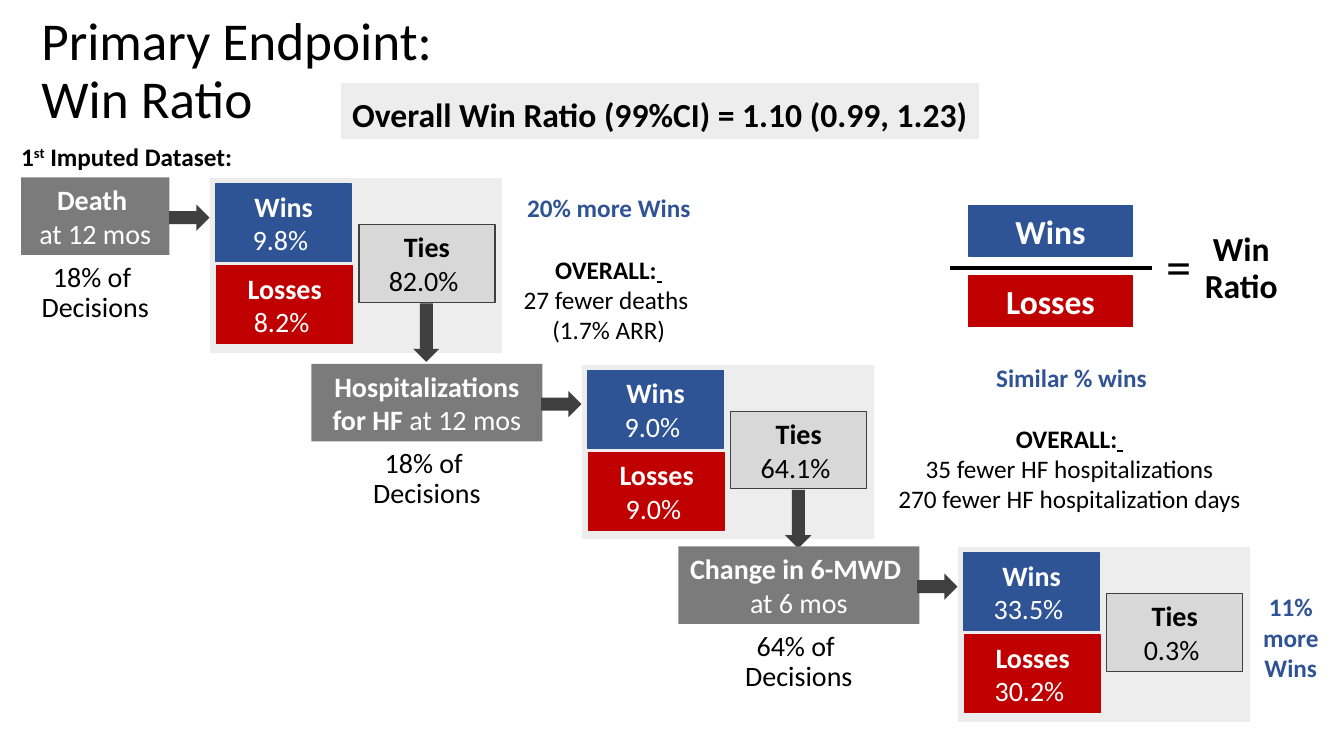
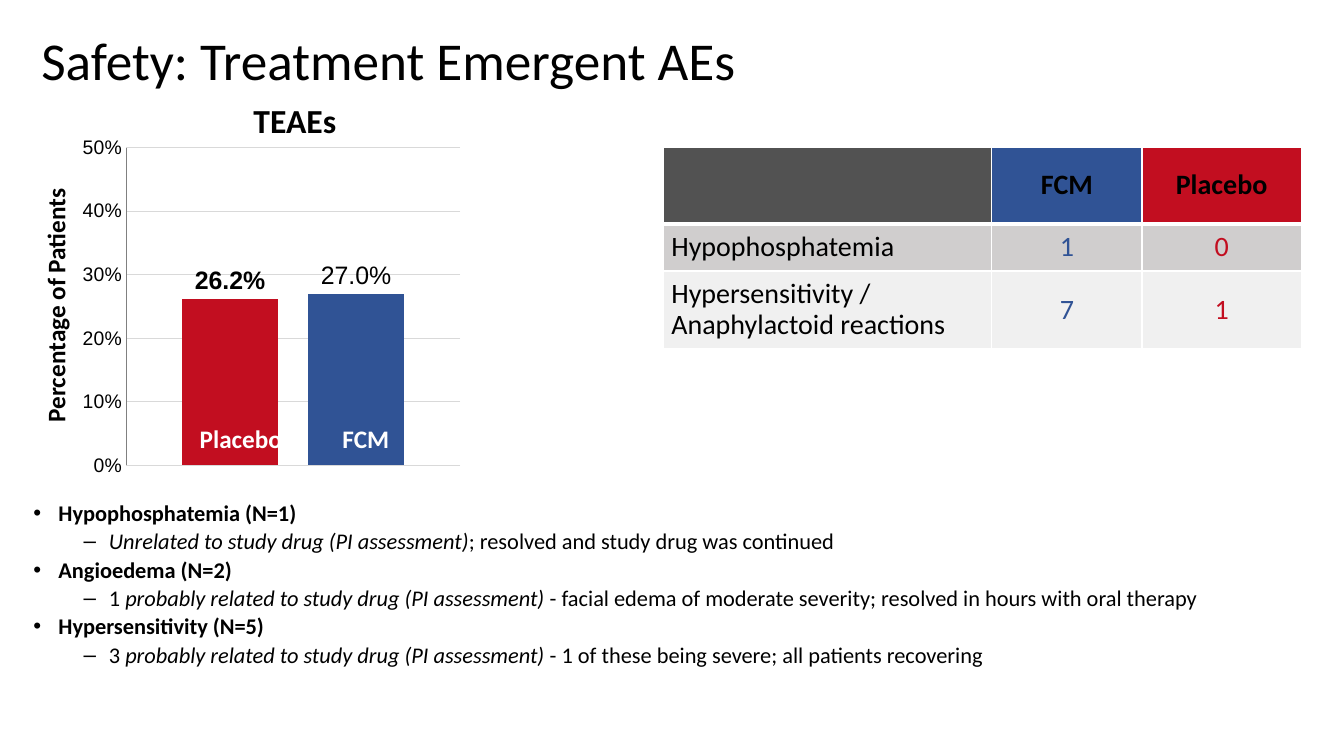
"""Build two trial result slides: the win ratio cascade and the safety summary."""
from lxml.etree import SubElement
from pptx import Presentation
from pptx.chart.data import CategoryChartData
from pptx.dml.color import RGBColor
from pptx.enum.chart import XL_CHART_TYPE as Chart, XL_LABEL_POSITION as LabelPos, XL_TICK_MARK as Tick
from pptx.enum.shapes import MSO_CONNECTOR as Link, MSO_SHAPE as Shape
from pptx.enum.text import MSO_ANCHOR as Anchor, PP_ALIGN as Align
from pptx.oxml import parse_xml
from pptx.oxml.ns import nsdecls, qn
from pptx.util import Inches, Pt

BLACK, WHITE = "000000", "FFFFFF"
WIN, LOSS, TIE = "2F5496", "C00000", "D8D8D8"
PANEL, STAGE, ARROW = "EDEDED", "7B7B7B", "3F3F3F"
FCM, PLACEBO = "305395", "C20E20"
FONT = "Calibri"
rgb = RGBColor.from_string

prs = Presentation()
prs.slide_width, prs.slide_height = Inches(13.33), Inches(7.5)
COL, ROW = prs.slide_width / 160, prs.slide_height / 90


def write(tf, paras, size, hex, align=Align.CENTER, spacing=1.0):
    """Fill a text frame with paragraphs, each a list of (text, style letters)."""
    for i, runs in enumerate(paras):
        p = tf.paragraphs[0] if i == 0 else tf.add_paragraph()
        p.alignment, p.line_spacing = align, spacing
        for text, style in runs:
            r = p.add_run()
            r.text = text
            r.font.name, r.font.size, r.font.color.rgb = FONT, Pt(size), rgb(hex)
            r.font.bold, r.font.italic = "b" in style, "i" in style
            r.font.underline = "u" in style
            if "^" in style:
                r.font._element.set("baseline", "30000")


def box(s, pos, paras=(), size=20, hex=BLACK, fill=None, line=None, weight=1,
        shape=Shape.RECTANGLE, align=Align.CENTER, spacing=1.0, inset=(0.1, 0.05)):
    """Place a text box, or a filled shape, at grid columns and rows."""
    x, y, w, h = (int(v * unit) for v, unit in zip(pos, (COL, ROW, COL, ROW)))
    if fill:
        sp = s.shapes.add_shape(shape, x, y, w, h)
        sp.shadow.inherit = False
        sp.fill.solid()
        sp.fill.fore_color.rgb = rgb(fill)
        if line:
            sp.line.color.rgb, sp.line.width = rgb(line), Pt(weight)
        else:
            sp.line.fill.background()
    else:
        sp = s.shapes.add_textbox(x, y, w, h)
    tf = sp.text_frame
    tf.word_wrap = True
    tf.vertical_anchor = Anchor.MIDDLE if fill else Anchor.TOP
    tf.margin_left = tf.margin_right = Inches(inset[0])
    tf.margin_top = tf.margin_bottom = Inches(inset[1])
    write(tf, paras, size, hex, align, spacing)
    return sp


titles = [(1.08, ["Primary Endpoint:", "Win Ratio"]), (0, ["Safety: Treatment Emergent AEs"])]
for top, lines in titles:
    s = prs.slides.add_slide(prs.slide_layouts[6])
    sp = box(s, (4.92, top, 150, 15), [[(t, "")] for t in lines], 38,
             align=Align.LEFT, spacing=0.9, inset=(0, 0))
    sp.text_frame.vertical_anchor = Anchor.MIDDLE
ratio, safety = prs.slides

s = ratio
box(s, (40.44, 9.72, 76.2, 6.96), [[("Overall Win Ratio (99%CI)\u00a0= 1.10 (0.99, 1.23)".replace("\u00a0", " "), "b")]],
    24, fill=PANEL, line=WHITE, weight=1.5, spacing=1.14)
box(s, (2.52, 15.72, 92, 5), [[("1", "b"), ("st", "b^"), (" Imputed Dataset:", "b")]], 18,
    align=Align.LEFT, spacing=1.14, inset=(0, 0.05))

stages = [
    (24.84, 21.12, 2.52, 17.64, [[("Death ", "b")], [("at 12 mos", "")]],
     "18%", ("9.8% ", "8.2% ", "82.0% ")),
    (69.12, 43.32, 37.08, 27.48, [[("Hospitalizations", "b")], [("for HF", "b"), (" at 12 mos", "")]],
     "18%", ("9.0% ", "9.0% ", "64.1% ")),
    (113.88, 65.04, 80.76, 28.68, [[("Change in 6-MWD ", "b")], [("at 6 mos", "")]],
     "64%", ("33.5% ", "30.2% ", "0.3% ")),
]
outcomes = [("Wins", 0.84, 0.78, WIN, WIN, WHITE), ("Losses", 0.96, 10.56, LOSS, LOSS, WHITE),
            ("Ties", 17.88, 5.64, TIE, ARROW, BLACK)]
for x, y, left, width, name, share, rates in stages:
    box(s, (x, y, 35.04, 21), fill=PANEL, line=WHITE, weight=1.5)
    for (label, dx, dy, fill, line, hex), rate in zip(outcomes, rates):
        box(s, (x + dx, y + dy, 16.2, 9.24), [[(label, "b")], [(rate, "")]],
            hex=hex, fill=fill, line=line)
    box(s, (left, y, width, 9.24), name, hex=WHITE, fill=STAGE)
    box(s, (left, y + 9.6, width, 9), [[(share + " of ", "")], [("Decisions", "")]], spacing=0.9)
    box(s, (x - 4.7, y + 3.24, 4.8, 3.12), fill=ARROW, shape=Shape.RIGHT_ARROW)
    if y < stages[-1][1]:
        box(s, (x + 24.36, y + 15, 3.12, 6.96), fill=ARROW, shape=Shape.DOWN_ARROW)

overall = [("OVERALL:", "b"), (" ", "u")]
comments = [
    ((60.84, 22.32, 23.28, 19.4), FCM, [[("20% more Wins", "b")]]),
    ((60.84, 29.64, 23.28, 12.1), BLACK, [overall, [("27 fewer deaths ", "")], [("(1.7% ARR)", "")]]),
    ((105.12, 42.6, 44.88, 4.8), FCM, [[("Similar % wins", "b")]]),
    ((104.88, 49.8, 44.88, 12.1), BLACK,
     [overall, [("35 fewer HF hospitalizations", "")], [("270 fewer HF hospitalization days", "")]]),
    ((149.16, 69.84, 9, 12.1), FCM, [[(t, "b")] for t in ("11%", "more", "Wins")]),
]
for pos, hex, paras in comments:
    box(s, pos, paras, 18, hex)

for label, top, fill in (("Wins", 24.48, WIN), ("Losses", 32.88, LOSS)):
    box(s, (115.32, top, 19.5, 6), [[(label, "b")]], 24, WHITE, fill, fill)
bar = s.shapes.add_connector(Link.STRAIGHT, int(113.04 * COL), int(31.92 * ROW),
                             int(137.16 * COL), int(31.92 * ROW))
bar.line.color.rgb, bar.line.width = rgb(BLACK), Pt(3)
SubElement(bar._element.spPr, qn("a:effectLst"))
box(s, (137.64, 27.36, 6.6, 8.52), [[("=", "")]], 36, align=Align.LEFT)
box(s, (139.68, 27.12, 16.2, 9.96), [[("Win Ratio", "b")]], 24, spacing=0.9)

s = safety
data = CategoryChartData(number_format="0.0%")
data.categories = ["1"]
data.add_series("Series 1", [0.262])
data.add_series("Series 2", [0.27])
chart = s.shapes.add_chart(Chart.COLUMN_CLUSTERED, int(9.84 * COL), int(11.64 * ROW),
                           int(46.32 * COL), int(45.6 * ROW), data).chart
chart.has_legend = chart.has_title = False
chart.font.name, chart.font.size, chart.font.color.rgb = "Arial", Pt(14), rgb(BLACK)
chart.category_axis.visible = False
axis = chart.value_axis
axis.minimum_scale, axis.maximum_scale, axis.major_unit = 0, 0.5, 0.1
axis.major_tick_mark = axis.minor_tick_mark = Tick.NONE
axis.tick_labels.number_format, axis.tick_labels.number_format_is_linked = "0%", False
axis.format.line.color.rgb, axis.format.line.width = rgb("808080"), Pt(0.75)
grid = axis.major_gridlines.format.line
grid.color.rgb, grid.width = rgb("D9D9D9"), Pt(0.75)
plot = chart.plots[0]
plot.gap_width, plot.overlap, plot.vary_by_categories = 118, -32, False
for series, hex, bold in zip(plot.series, (PLACEBO, FCM), (True, False)):
    series.format.fill.solid()
    series.format.fill.fore_color.rgb = rgb(hex)
    labels = series.data_labels
    labels.show_value, labels.position = True, LabelPos.OUTSIDE_END
    labels.number_format, labels.number_format_is_linked = "0.0%", False
    labels.font.name, labels.font.size, labels.font.bold = "Arial", Pt(18), bold
    labels.font.color.rgb = rgb(BLACK)
area = chart.element.xpath("c:chart/c:plotArea")[0]
for old in area.findall(qn("c:layout")):
    area.remove(old)
area.insert(0, parse_xml(
    f'<c:layout {nsdecls("c")}><c:manualLayout><c:layoutTarget val="inner"/>'
    '<c:xMode val="edge"/><c:yMode val="edge"/><c:x val="0.1"/><c:y val="0.13"/>'
    '<c:w val="0.87"/><c:h val="0.83"/></c:manualLayout></c:layout>'))

box(s, (15, 11.9, 40.2, 5.3), [[("TEAEs", "b")]], 24, spacing=0.9)
box(s, (-12.6, 33.96, 38.4, 4.8), [[("Percentage of Patients", "b")]], 18).rotation = 270
for label, left in (("Placebo", 18.96), ("FCM", 33.84)):
    box(s, (left, 49.8, 19.44, 4.8), [[(label, "b")]], 18, WHITE)

rows = [("", "FCM", "Placebo"), ("Hypophosphatemia", "1", "0"),
        ("Hypersensitivity / Anaphylactoid reactions", "7", "1")]
widths, heights = (39.12, 17.88, 18.96), (9.12, 5.64, 9.24)
table = s.shapes.add_table(3, 3, int(78.96 * COL), int(17.52 * ROW),
                           int(sum(widths) * COL), int(sum(heights) * ROW)).table
for c, width in enumerate(widths):
    table.columns[c].width = int(width * COL)
for i, (row, height) in enumerate(zip(rows, heights)):
    table.rows[i].height = int(height * ROW)
    for c, text in enumerate(row):
        cell = table.cell(i, c)
        cell.vertical_anchor = Anchor.MIDDLE
        cell.margin_left = cell.margin_right = cell.margin_top = cell.margin_bottom = Inches(0.08)
        for side in "LRTB":
            thick = (side, i) in (("B", 0), ("T", 1))
            cell._tc.get_or_add_tcPr().append(parse_xml(
                f'<a:ln{side} {nsdecls("a")} w="{Pt(3 if thick else 1)}"><a:solidFill>'
                f'<a:srgbClr val="{WHITE}"/></a:solidFill></a:ln{side}>'))
        cell.fill.solid()
        cell.fill.fore_color.rgb = rgb((("525252", FCM, PLACEBO)[c], "D0CECE", "F0F0F0")[i])
        if text:
            write(cell.text_frame, [[(text, "b" if i == 0 else "")]], 20,
                  (BLACK, FCM, PLACEBO)[c] if i else BLACK,
                  Align.CENTER if c or i == 0 else Align.LEFT, 0.9)

related = ("probably related to study drug (PI assessment)", "i")
events = [
    [("Hypophosphatemia (N=1)", "b")],
    [("Unrelated to study drug (PI assessment)", "i"), ("; resolved and study drug was continued", "")],
    [("Angioedema (N=2)", "b")],
    [("1 ", ""), related,
     (" - facial edema of moderate severity; resolved in hours with oral therapy", "")],
    [("Hypersensitivity (N=5)", "b")],
    [("3 ", ""), related, (" - 1 of these being severe; all patients recovering", "")],
]
sp = box(s, (3.96, 59.76, 154.9, 19.9), events, 16, align=Align.LEFT, spacing=0.9, inset=(0, 0))
for i, p in enumerate(sp.text_frame.paragraphs):
    p.level = i % 2
    if i:
        p.space_before = Pt(3)
    pPr = p._p.get_or_add_pPr()
    pPr.set("marL", str(Inches((0.25, 0.75)[p.level])))
    pPr.set("indent", str(-Inches(0.25)))
    SubElement(pPr, qn("a:buFont")).set("typeface", "Arial")
    SubElement(pPr, qn("a:buChar")).set("char", "•–"[p.level])

prs.save("out.pptx")
